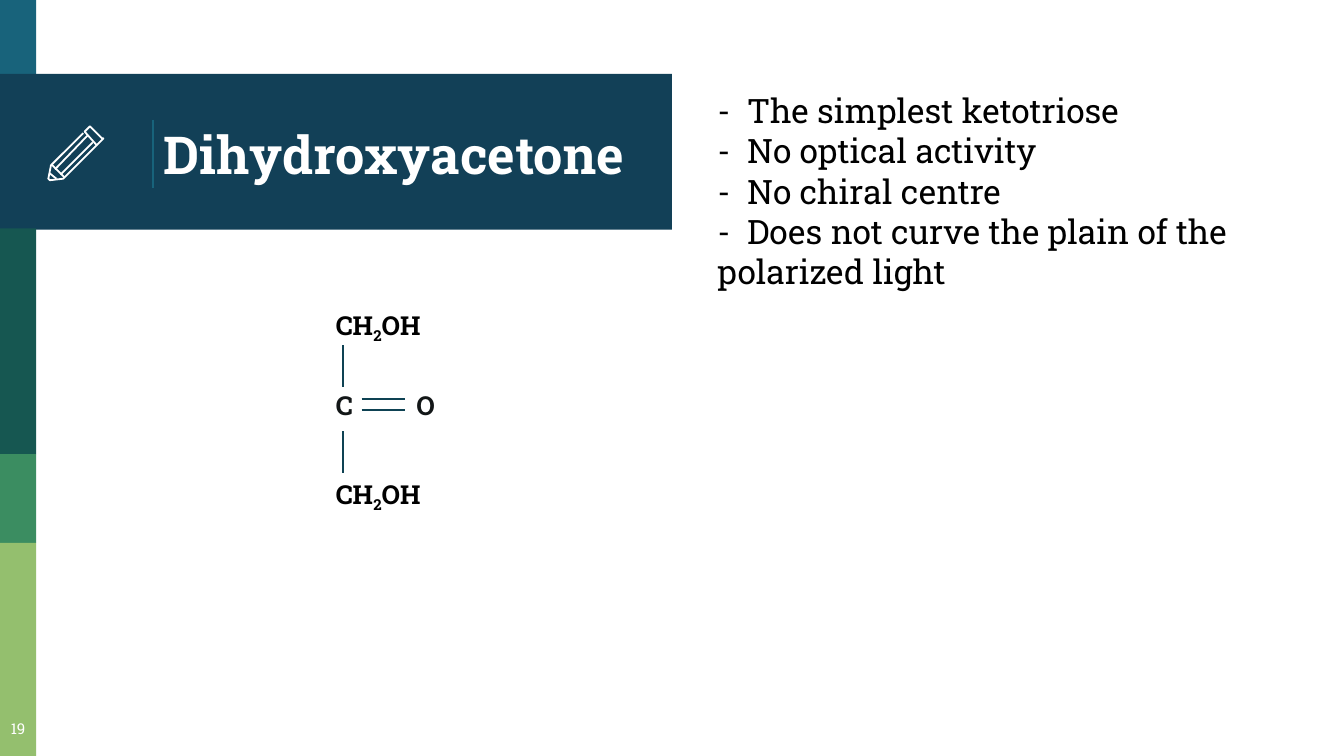
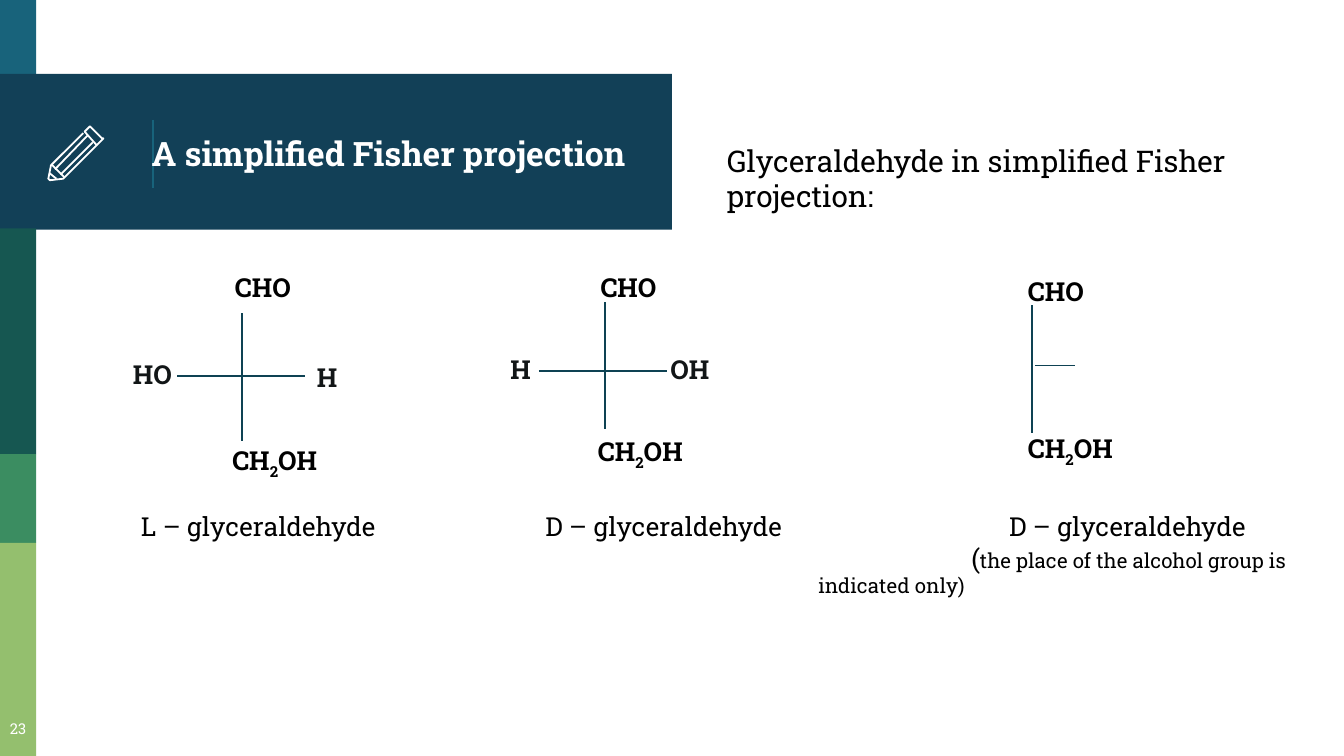
import itertools

import pptx
import pptx.dml.color
import pptx.enum.shapes
import pptx.enum.text
import pptx.oxml.ns
import pptx.util
from lxml import etree

Inches = pptx.util.Inches
FONT = "Roboto Slab"
WHITE, BLACK, INK = "FFFFFF", "000000", "121617"
NAVY, BLUE, BOND = "124057", "18637B", "0E4253"

# left, top, width, height, colour
BANDS = [
    (0, 0, 0.27, 0.58, BLUE),
    (0, 0.55, 5, 1.16, NAVY),
    (0, 1.7, 0.27, 1.68, "165751"),
    (0, 3.38, 0.27, 0.66, "3B8D61"),
    (0, 4.04, 0.27, 1.59, "94BF6E"),
]

# points of each stroke, and whether it is closed
PENCIL = [
    ([(0.4, 0.09), (0.32, 0.01), (0.31, 0), (0.3, 0.01), (0.27, 0.04),
      (0.36, 0.14), (0.4, 0.1), (0.41, 0.09)], True),
    ([(0.33, 0.12), (0.09, 0.36)], False),
    ([(0.26, 0.05), (0.02, 0.29), (0, 0.39), (0.01, 0.4), (0.02, 0.4),
      (0.11, 0.39), (0.12, 0.38), (0.36, 0.14)], False),
    ([(0.05, 0.32), (0.29, 0.07)], False),
    ([(0.06, 0.39), (0.01, 0.35)], False),
    ([(0.02, 0.29), (0.03, 0.29), (0.12, 0.38)], False),
]

LABEL_WIDTHS = {"CH2OH": 0.85, "CHO": 0.75, "HO": 0.49, "OH": 0.5,
                "H": 0.36, "O": 0.34, "C": 0.31}


def rgb(code):
    return pptx.dml.color.RGBColor.from_string(code)


def style(paragraph, size, color=BLACK, bold=False):
    for run in paragraph.runs:
        font = run.font
        font.name, font.size, font.bold = FONT, pptx.util.Pt(size), bold
        font.color.rgb = rgb(color)


def add_text(shapes, box, lines, size, color=BLACK, bold=False, inset=0.05):
    frame = shapes.add_textbox(*map(Inches, box)).text_frame
    frame.word_wrap = True
    frame.margin_left = frame.margin_right = Inches(0.1)
    frame.margin_top = frame.margin_bottom = Inches(inset)
    frame.text = "\n".join(lines)
    for paragraph in frame.paragraphs:
        style(paragraph, size, color, bold)
    return frame


def add_line(shapes, start, end, color, width):
    line = shapes.add_connector(pptx.enum.shapes.MSO_CONNECTOR.STRAIGHT,
                                *map(Inches, (*start, *end)))
    line.line.color.rgb = rgb(color)
    line.line.width = pptx.util.Pt(width)
    etree.SubElement(line._element.spPr, pptx.oxml.ns.qn("a:effectLst"))


def add_pencil(slide, left, top):
    group = slide.shapes.add_group_shape()
    for points, closed in PENCIL:
        places = [(Inches(left + x), Inches(top + y)) for x, y in points]
        builder = group.shapes.build_freeform(*places[0])
        builder.add_line_segments(places[1:], close=closed)
        stroke = builder.convert_to_shape()
        stroke.shadow.inherit = False
        stroke.fill.background()
        stroke.line.color.rgb = rgb(WHITE)
        stroke.line.width = pptx.util.Pt(0.96)


def add_base(deck, title, title_box, title_size, number):
    """Add a slide with the bands, title, pencil and page number."""
    slide = deck.slides.add_slide(deck.slide_layouts[6])
    for *box, color in BANDS:
        band = slide.shapes.add_shape(
            pptx.enum.shapes.MSO_SHAPE.RECTANGLE, *map(Inches, box))
        band.shadow.inherit = False
        band.fill.solid()
        band.fill.fore_color.rgb = rgb(color)
        band.line.fill.background()
    add_line(slide.shapes, (1.14, 0.89), (1.14, 1.4), BLUE, 0.75)
    heading = add_text(slide.shapes, title_box, [title], title_size, WHITE,
                       bold=True, inset=0.1)
    heading.vertical_anchor = pptx.enum.text.MSO_ANCHOR.MIDDLE
    add_pencil(slide, 0.36, 0.94)
    page = add_text(slide.shapes, (0, 5.27, 0.27, 0.35), [number], 8, WHITE,
                    inset=0.1)
    page.margin_left = page.margin_right = 0
    page.margin_top = Inches(0.14)
    page.paragraphs[0].alignment = pptx.enum.text.PP_ALIGN.CENTER
    return slide


def add_molecule(slide, left, top, groups, bonds):
    """Draw atom groups (text, x, y) and bonds (x1, y1, x2, y2) from a corner."""
    shapes = slide.shapes.add_group_shape().shapes
    for x1, y1, x2, y2 in bonds:
        add_line(shapes, (left + x1, top + y1), (left + x2, top + y2), BOND, 1)
    for formula, x, y in groups:
        box = (left + x, top + y, LABEL_WIDTHS[formula], 0.34)
        frame = add_text(shapes, box, [""], 14)
        frame.margin_right = 0
        paragraph = frame.paragraphs[0]
        for is_digit, part in itertools.groupby(formula, str.isdigit):
            run = paragraph.add_run()
            run.text = "".join(part)
            if is_digit:
                run.font._element.set("baseline", "-25000")
        color = BLACK if formula.startswith("CH") else INK
        style(paragraph, 14, color, bold=True)


def set_tabs(paragraph, stops):
    properties = paragraph._p.get_or_add_pPr()
    tabs = etree.SubElement(properties, pptx.oxml.ns.qn("a:tabLst"))
    for stop in stops:
        tab = etree.SubElement(tabs, pptx.oxml.ns.qn("a:tab"))
        tab.set("pos", str(Inches(stop)))
        tab.set("algn", "l")


def add_facts(slide, box, facts):
    """List the facts after dashes; wrapped lines return to the left edge."""
    frame = add_text(slide.shapes, box, [f"-\t{fact}" for fact in facts], 18)
    for paragraph in frame.paragraphs:
        set_tabs(paragraph, [0.22])


def add_captions(slide, box, names, remark, stops):
    """Set the names on tab stops, with the remark below the last one."""
    frame = add_text(slide.shapes, box, ["\t".join(names), "("], 14)
    name_line, remark_line = frame.paragraphs
    set_tabs(name_line, stops)
    properties = remark_line._p.get_or_add_pPr()
    properties.set("marL", str(Inches(5.04)))
    properties.set("indent", str(Inches(1.14)))
    run = remark_line.add_run()
    run.text = remark
    style(remark_line, 11)
    remark_line.runs[0].font.size = pptx.util.Pt(14)


def dihydroxyacetone_slide(deck):
    slide = add_base(deck, "Dihydroxyacetone", (1.12, 0.58, 3.88, 1.12), 28, "19")
    add_molecule(
        slide, 2.4, 2.25,
        [("CH2OH", 0, 0), ("C", 0, 0.6), ("O", 0.6, 0.6), ("CH2OH", 0, 1.26)],
        [(0.15, 0.32, 0.15, 0.63), (0.15, 0.96, 0.15, 1.27),
         (0.29, 0.72, 0.61, 0.72), (0.29, 0.8, 0.61, 0.8)])
    add_facts(slide, (5.24, 0.62, 4.24, 1.92), [
        "The simplest ketotriose",
        "No optical activity",
        "No chiral centre",
        "Does not curve the plain of the polarized light",
    ])


def fisher_slide(deck):
    slide = add_base(deck, "A simplified Fisher projection",
                     (1.03, 0.58, 4.21, 1.12), 18, "23")
    add_molecule(
        slide, 0.89, 1.97,
        [("CHO", 0.76, 0), ("HO", 0, 0.65), ("H", 1.37, 0.67),
         ("CH2OH", 0.74, 1.29)],
        [(0.91, 0.36, 0.91, 1.31), (0.43, 0.83, 1.38, 0.83)])
    add_molecule(
        slide, 3.7, 1.97,
        [("CHO", 0.67, 0), ("H", 0, 0.61), ("OH", 1.19, 0.61),
         ("CH2OH", 0.65, 1.22)],
        [(0.8, 0.28, 0.8, 1.22), (0.31, 0.79, 1.26, 0.79)])
    add_molecule(
        slide, 7.5, 2,
        [("CHO", 0.05, 0), ("CH2OH", 0.05, 1.17)],
        [(0.18, 0.27, 0.18, 1.22), (0.2, 0.72, 0.5, 0.72)])
    add_text(slide.shapes, (5.31, 1.01, 4.52, 0.64),
             ["Glyceraldehyde in simplified Fisher projection:"], 16)
    add_captions(
        slide, (0.95, 3.75, 9.04, 0.76),
        ["L – glyceraldehyde", "D – glyceraldehyde", "D – glyceraldehyde"],
        "the place of the alcohol group is indicated only)", (3.01, 6.46))


def main():
    deck = pptx.Presentation()
    deck.slide_width = Inches(10)
    deck.slide_height = deck.slide_width * 9 // 16
    dihydroxyacetone_slide(deck)
    fisher_slide(deck)
    deck.save("out.pptx")


if __name__ == "__main__":
    main()
